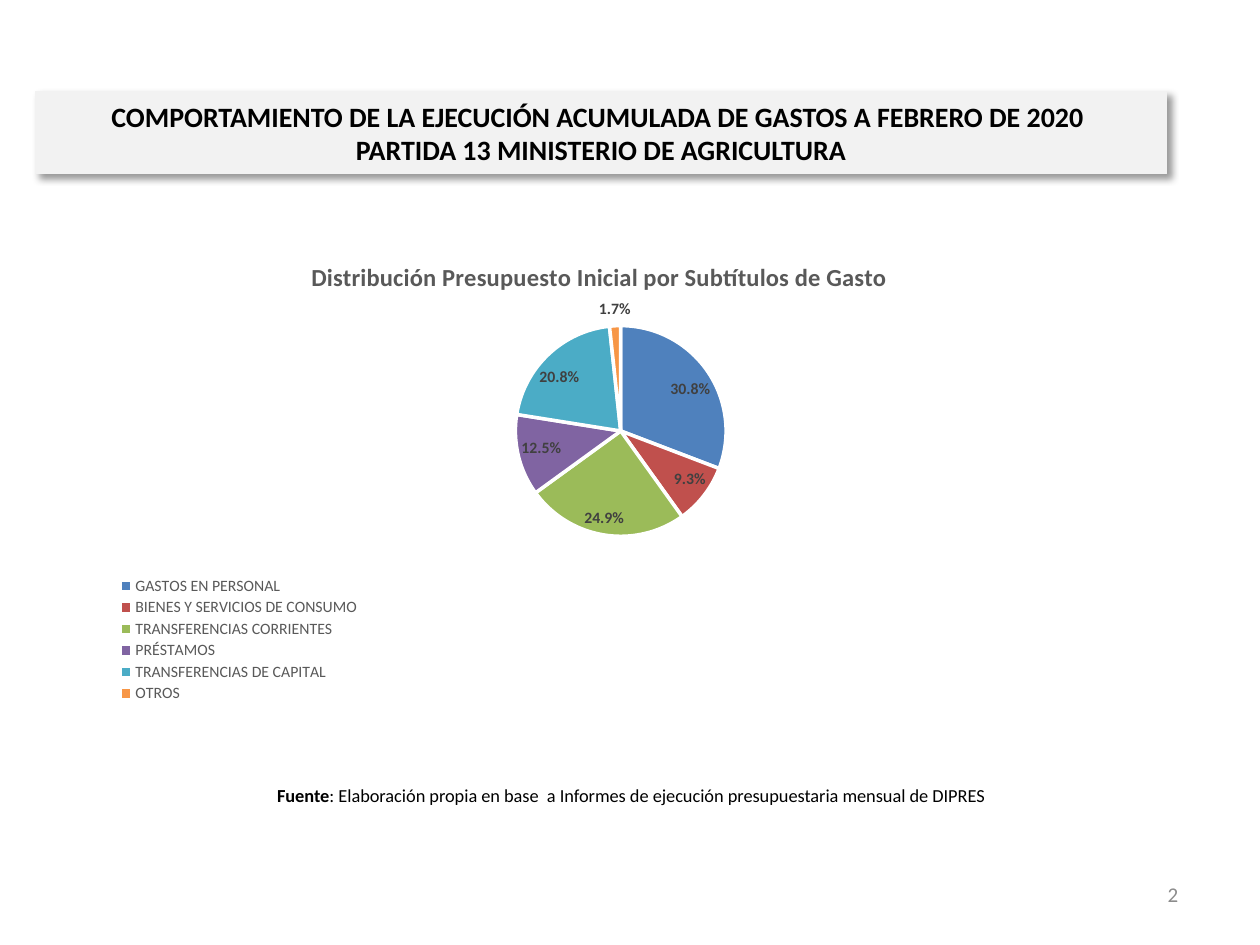
from dataclasses import dataclass

from lxml import etree
from pptx import Presentation
from pptx.chart.data import CategoryChartData
from pptx.dml.color import RGBColor
from pptx.enum.chart import XL_CHART_TYPE, XL_LABEL_POSITION, XL_LEGEND_POSITION
from pptx.enum.text import MSO_ANCHOR, MSO_AUTO_SIZE, PP_ALIGN
from pptx.oxml import parse_xml
from pptx.oxml.ns import nsdecls, qn
from pptx.util import Inches, Pt

PIE = XL_CHART_TYPE.PIE
BEST_FIT = XL_LABEL_POSITION.BEST_FIT
BOTTOM = XL_LEGEND_POSITION.BOTTOM
MIDDLE = MSO_ANCHOR.MIDDLE
NO_AUTOFIT = MSO_AUTO_SIZE.NONE
CENTER, RIGHT = PP_ALIGN.CENTER, PP_ALIGN.RIGHT
TITLE_ONLY = 5


@dataclass(frozen=True)
class Theme:
    font: str = "Calibri"
    text: str = "000000"
    muted: str = "595959"
    label: str = "404040"
    number: str = "8C8C8C"
    panel: str = "F2F2F2"
    gap: str = "FFFFFF"
    title_size: float = 16
    chart_title_size: float = 14
    number_size: float = 12
    source_size: float = 10.5
    chart_size: float = 10
    label_size: float = 9


THEME = Theme()

EXPENSES = [
    ("GASTOS EN PERSONAL", 30.8, "4F81BD"),
    ("BIENES Y SERVICIOS DE CONSUMO", 9.3, "C0504D"),
    ("TRANSFERENCIAS CORRIENTES", 24.9, "9BBB59"),
    ("PRÉSTAMOS", 12.5, "8064A2"),
    ("TRANSFERENCIAS DE CAPITAL", 20.8, "4BACC6"),
    ("OTROS", 1.7, "F79646"),
]


def rgb(value):
    return RGBColor.from_string(value)


def set_font(font, size, color, bold=None):
    font.name = THEME.font
    font.size = Pt(size)
    font.color.rgb = rgb(color)
    font.bold = bold


def place(shape, left, top, width, height):
    shape.left, shape.top = Inches(left), Inches(top)
    shape.width, shape.height = Inches(width), Inches(height)


def add_shadow(shape):
    shape._element.spPr.append(parse_xml(
        f'<a:effectLst {nsdecls("a")}>'
        '<a:outerShdw blurRad="50800" dist="38100" dir="2700000" algn="tl" rotWithShape="0">'
        '<a:srgbClr val="000000"><a:alpha val="40000"/></a:srgbClr>'
        '</a:outerShdw></a:effectLst>'))


def add_title(s, text):
    title = s.shapes.title
    place(title, 0.28, 0.73, 8.98, 0.65)
    title.fill.solid()
    title.fill.fore_color.rgb = rgb(THEME.panel)
    title.line.color.rgb = rgb(THEME.panel)
    title.line.width = Pt(0.75)
    add_shadow(title)
    tf = title.text_frame
    tf.text = text
    tf.auto_size = NO_AUTOFIT
    tf.vertical_anchor = MIDDLE
    p = tf.paragraphs[0]
    p.alignment = CENTER
    set_font(p.font, THEME.title_size, THEME.text, True)


def add_text(s, box, runs, size, color, align):
    tf = s.shapes.add_textbox(*map(Inches, box)).text_frame
    tf.word_wrap = True
    tf.vertical_anchor = MIDDLE
    p = tf.paragraphs[0]
    p.alignment = align
    set_font(p.font, size, color)
    for text, bold in runs:
        r = p.add_run()
        r.text = text
        r.font.bold = bold


def set_layout(element, successors, target=None, **fractions):
    for old in element.findall(qn("c:layout")):
        element.remove(old)
    layout = etree.Element(qn("c:layout"))
    manual = etree.SubElement(layout, qn("c:manualLayout"))
    if target:
        etree.SubElement(manual, qn("c:layoutTarget")).set("val", target)
    for axis in ("x", "y"):
        etree.SubElement(manual, qn(f"c:{axis}Mode")).set("val", "edge")
    for key, value in fractions.items():
        etree.SubElement(manual, qn(f"c:{key}")).set("val", str(value))
    tags = [qn(f"c:{name}") for name in successors]
    following = next(child for child in element if child.tag in tags)
    following.addprevious(layout)


def add_pie(s, title, expenses):
    data = CategoryChartData()
    data.categories = [name for name, _, _ in expenses]
    data.add_series("Presupuesto", [value for _, value, _ in expenses])
    box = map(Inches, (0.28, 1.83, 8.98, 3.89))
    chart = s.shapes.add_chart(PIE, *box, data).chart
    set_font(chart.font, THEME.chart_size, THEME.text)

    tf = chart.chart_title.text_frame
    tf.text = title
    set_font(tf.paragraphs[0].font, THEME.chart_title_size, THEME.muted, True)
    set_layout(chart.chart_title._element, ["overlay"], x=0.24, y=0.05)

    plot = chart.plots[0]
    plot.vary_by_categories = True
    for i, (_, _, color) in enumerate(expenses):
        fmt = plot.series[0].points[i].format
        fmt.fill.solid()
        fmt.fill.fore_color.rgb = rgb(color)
        fmt.line.color.rgb = rgb(THEME.gap)
        fmt.line.width = Pt(2)
    labels = plot.series[0].data_labels
    labels.show_percentage = True
    labels.show_value = False
    labels.number_format = "0.0%"
    labels.number_format_is_linked = False
    labels.position = BEST_FIT
    set_font(labels.font, THEME.label_size, THEME.label, True)

    chart.has_legend = True
    legend = chart.legend
    legend.position = BOTTOM
    legend.include_in_layout = False
    set_font(legend.font, THEME.label_size, THEME.muted)
    set_layout(legend._element, ["overlay"], x=0.06, y=0.7, w=0.24, h=0.27)
    set_layout(chart._chartSpace.chart.plotArea, ["pieChart"], "inner",
               x=0.035, y=0.194, w=0.965, h=0.43)


def main():
    prs = Presentation()
    prs.slide_width, prs.slide_height = Inches(10), Inches(7.5)
    s = prs.slides.add_slide(prs.slide_layouts[TITLE_ONLY])
    add_title(s, "COMPORTAMIENTO DE LA EJECUCIÓN ACUMULADA DE GASTOS A FEBRERO DE 2020 \v"
                 "PARTIDA 13 MINISTERIO DE AGRICULTURA")
    add_pie(s, "Distribución Presupuesto Inicial por Subtítulos de Gasto", EXPENSES)
    source = [("Fuente", True),
              (": Elaboración propia en base  a Informes de ejecución "
               "presupuestaria mensual de DIPRES", False)]
    add_text(s, (0.77, 6.11, 8.48, 0.4), source, THEME.source_size, THEME.text, CENTER)
    add_text(s, (7.12, 6.9, 2.33, 0.4), [("2", None)], THEME.number_size, THEME.number, RIGHT)
    prs.save("out.pptx")


if __name__ == "__main__":
    main()
